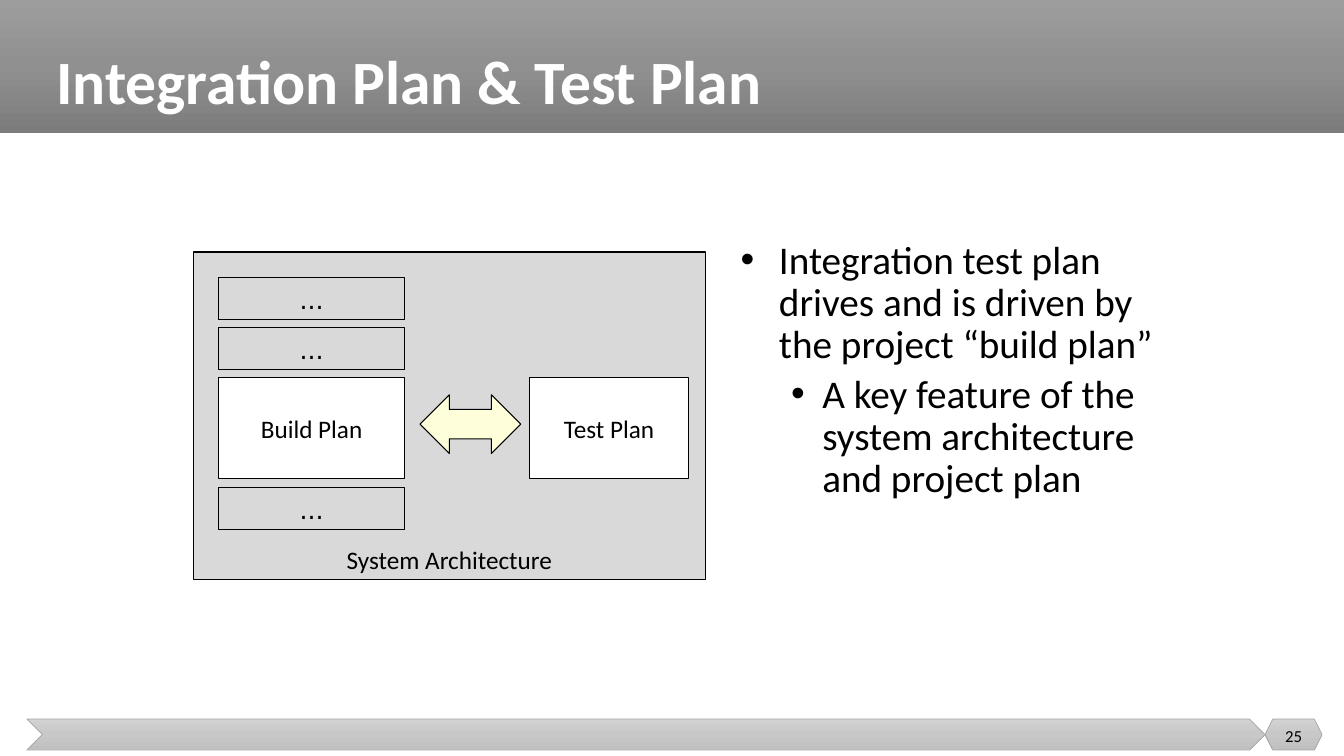
from copy import deepcopy

from lxml.etree import SubElement
from pptx import Presentation
from pptx.dml.color import RGBColor
from pptx.enum.shapes import MSO_SHAPE as Preset
from pptx.enum.text import MSO_ANCHOR as Anchor, MSO_AUTO_SIZE as AutoSize, PP_ALIGN as Align
from pptx.oxml.ns import qn
from pptx.util import Inches, Pt

COLORS = {
    "ink": "000000", "white": "FFFFFF", "panel": "D9D9D9", "arrow": "FFFEDA", "edge": "A5A5A5",
    "band_top": "9D9D9D", "band_mid": "909090", "band_end": "7C7C7C",
    "bar_top": "D2D2D2", "bar_mid": "C8C8C8", "bar_end": "C0C0C0",
}
BAND = ("band_top", "band_mid", "band_end")
BAR = ("bar_top", "bar_mid", "bar_end")
COLUMNS, ROWS = 160, 90  # cells of a twelfth of an inch


def color(name):
    return RGBColor.from_string(COLORS[name])


def cells(count):
    return Inches(count / 12)


class SlideBuilder:
    def __init__(self, deck, font="Calibri"):
        self.page = deck.slides.add_slide(deck.slide_layouts[5])
        self.shapes = self.page.shapes
        self.font = font

    def add_text(self, para, text, size, ink="ink", font=None, **para_format):
        """Put one styled run into a paragraph."""
        for name, value in para_format.items():
            setattr(para, name, value)
        span = para.add_run()
        span.text = text
        span.font.name = font or self.font
        span.font.size = Pt(size)
        span.font.color.rgb = color(ink)
        return span

    def frame(self, shape, **frame_format):
        for name, value in frame_format.items():
            setattr(shape.text_frame, name, value)
        return shape.text_frame

    def shape(self, preset, place, fill, line="ink", width=0.75):
        """Add a preset shape; a tuple of fills makes a vertical gradient."""
        box = self.shapes.add_shape(preset, *map(cells, place))
        box.shadow.inherit = False
        if isinstance(fill, tuple):
            box.fill.gradient()
            box.fill.gradient_angle = 270
            stop_list = box._element.spPr.find(".//" + qn("a:gsLst"))
            stop_list.append(deepcopy(stop_list[0]))
            for index, (stop, name) in enumerate(zip(box.fill.gradient_stops, fill)):
                stop.position = index / 2
                stop.color.rgb = color(name)
        else:
            box.fill.solid()
            box.fill.fore_color.rgb = color(fill)
        if line:
            box.line.color.rgb = color(line)
            box.line.width = Pt(width)
        else:
            box.line.fill.background()
        return box

    def label_box(self, place, text, fill, anchor, font=None):
        box = self.shape(Preset.RECTANGLE, place, fill)
        frame = self.frame(box, word_wrap=False, vertical_anchor=anchor)
        self.add_text(frame.paragraphs[0], text, 18, font=font, alignment=Align.CENTER)

    def title(self, place, text):
        title = self.shapes.title
        for name, value in zip(("left", "top", "width", "height"), place):
            setattr(title, name, cells(value))
        frame = self.frame(title, word_wrap=True, auto_size=AutoSize.NONE,
                           vertical_anchor=Anchor.MIDDLE)
        span = self.add_text(frame.paragraphs[0], text, 44, "white",
                             alignment=Align.LEFT, line_spacing=0.9)
        span.font.bold = True
        self.shapes._spTree.append(title._element)  # in front of the band

    def text_box(self, place, anchor=Anchor.TOP):
        box = self.shapes.add_textbox(*map(cells, place))
        return self.frame(box, word_wrap=True, vertical_anchor=anchor)

    def bullets(self, place, items):
        frame = self.text_box(place)
        for index, (level, indent, hang, before, text) in enumerate(items):
            para = frame.add_paragraph() if index else frame.paragraphs[0]
            self.add_text(para, text, 28, level=level, line_spacing=0.9, space_before=Pt(before))
            settings = para._p.get_or_add_pPr()
            settings.set("marL", str(Inches(indent)))
            settings.set("indent", str(-Inches(hang)))
            SubElement(settings, qn("a:buFont"), typeface="Arial")
            SubElement(settings, qn("a:buChar"), char="•")


def main():
    deck = Presentation()
    deck.slide_width, deck.slide_height = cells(COLUMNS), cells(ROWS)
    slide = SlideBuilder(deck)

    # Header band and footer bar
    slide.shape(Preset.RECTANGLE, (0, 0, COLUMNS, 15.84), BAND, line=None)
    slide.shape(Preset.CHEVRON, (3.2, 85.6, 147.4, 3.7), BAR, "edge", 0.5)
    slide.shape(Preset.HEXAGON, (150.6, 85.6, 6.8, 3.7), BAR, "edge", 0.5)

    # Architecture panel
    slide.label_box((23, 30, 61, 39), "System Architecture", "panel", Anchor.BOTTOM)

    # Title and bullets
    slide.title((5.5, 1.4, 138, 17.4), "Integration Plan & Test Plan")
    slide.bullets((87, 28, 55.5, 46), [
        (0, 0.38, 0.38, 10,
         "Integration test plan drives and is driven by the project “build plan”"),
        (1, 0.81, 0.31, 5, "A key feature of the system architecture and project plan"),
    ])

    # Plans, the arrow between them and the other parts
    for left, width, text in ((26, 22.2, "Build Plan"), (63, 19, "Test Plan")):
        slide.label_box((left, 45, width, 12), text, "white", Anchor.MIDDLE)
    for top in (33, 39, 58):
        slide.label_box((26, top, 22.2, 5), "...", "panel", Anchor.BOTTOM, "DejaVu Sans")
    slide.shape(Preset.LEFT_RIGHT_ARROW, (50, 47, 12, 7), "arrow")

    # Page number
    number = slide.text_box((150.6, 85.2, 6.8, 4.8), Anchor.MIDDLE)
    slide.add_text(number.paragraphs[0], "25", 12, alignment=Align.CENTER)

    deck.save("out.pptx")


if __name__ == "__main__":
    main()
